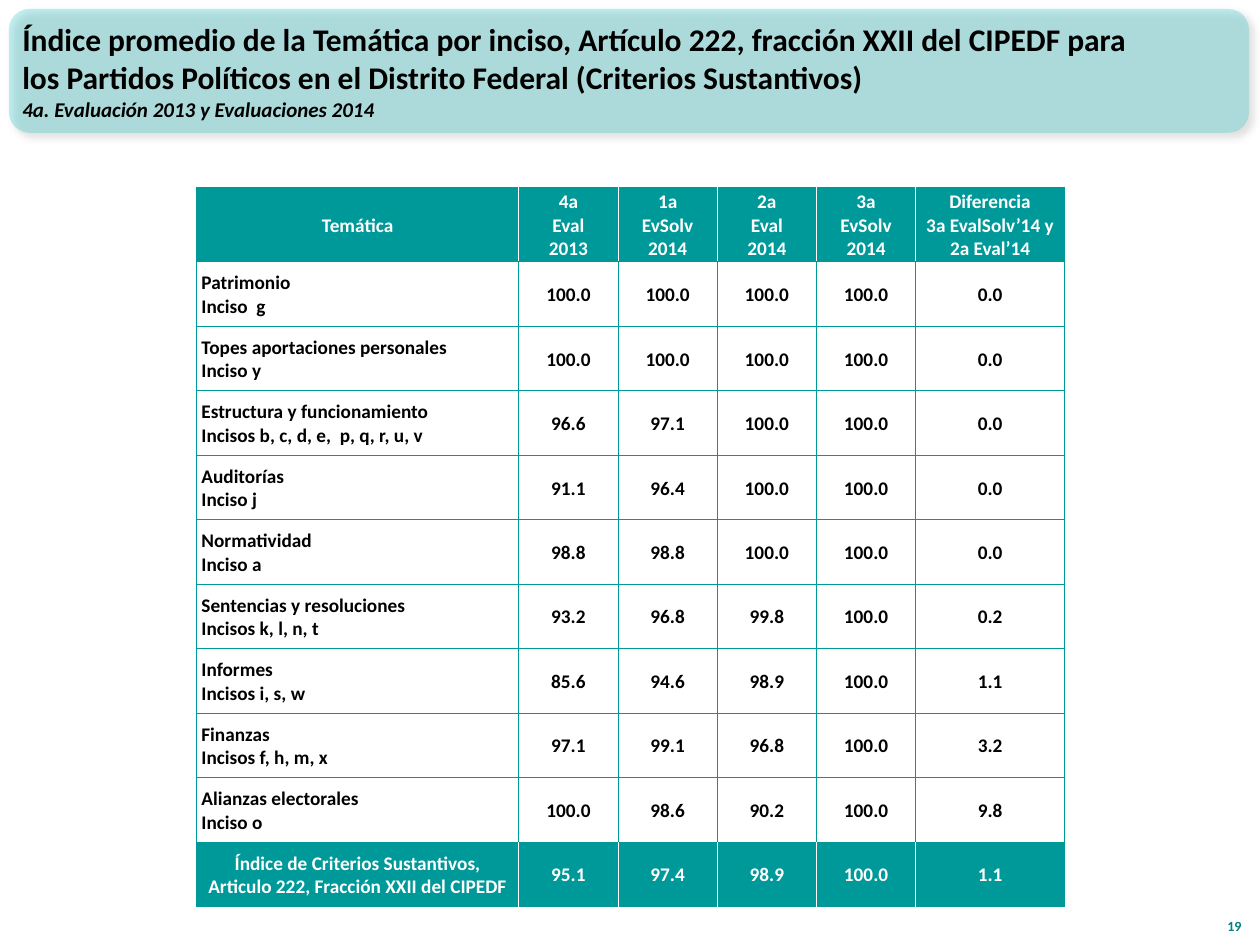
"""Build the slide with the thematic index table for political parties."""
from typing import NamedTuple

from lxml.etree import SubElement
from pptx import Presentation
from pptx.dml.color import RGBColor
from pptx.enum.shapes import MSO_SHAPE
from pptx.enum.text import MSO_ANCHOR, PP_ALIGN
from pptx.oxml.ns import qn
from pptx.util import Cm, Pt

TEAL, WHITE, BLACK = "009999", "FFFFFF", "000000"


class Box(NamedTuple):
    left: float
    top: float
    width: float
    height: float

    def cm(self) -> list:
        return [Cm(side) for side in self]


class Row(NamedTuple):
    label: str
    values: tuple
    solid: bool = False


ROWS = [
    Row("Temática", ("4a\nEval\n2013", "1a\nEvSolv\n2014", "2a\nEval\n2014",
                     "3a\nEvSolv\n2014",
                     "Diferencia\n3a EvalSolv’14 y\n2a Eval’14"), True),
    Row("Patrimonio\nInciso  g", ("100.0", "100.0", "100.0", "100.0", "0.0")),
    Row("Topes aportaciones personales\nInciso y",
        ("100.0", "100.0", "100.0", "100.0", "0.0")),
    Row("Estructura y funcionamiento\nIncisos b, c, d, e,  p, q, r, u, v",
        ("96.6", "97.1", "100.0", "100.0", "0.0")),
    Row("Auditorías\nInciso j", ("91.1", "96.4", "100.0", "100.0", "0.0")),
    Row("Normatividad\nInciso a", ("98.8", "98.8", "100.0", "100.0", "0.0")),
    Row("Sentencias y resoluciones\nIncisos k, l, n, t",
        ("93.2", "96.8", "99.8", "100.0", "0.2")),
    Row("Informes\nIncisos i, s, w", ("85.6", "94.6", "98.9", "100.0", "1.1")),
    Row("Finanzas\nIncisos f, h, m, x",
        ("97.1", "99.1", "96.8", "100.0", "3.2")),
    Row("Alianzas electorales\nInciso o",
        ("100.0", "98.6", "90.2", "100.0", "9.8")),
    Row("Índice de Criterios Sustantivos,\n"
        "Articulo 222, Fracción XXII del CIPEDF",
        ("95.1", "97.4", "98.9", "100.0", "1.1"), True),
]
WIDTHS = (6.5, 2, 2, 2, 2, 3)
HEIGHTS = (1.5,) + (1.3,) * (len(ROWS) - 1)


def paint(target, tint: str) -> None:
    target.rgb = RGBColor.from_string(tint)


def style(para, size: float, tint: str, align=PP_ALIGN.LEFT) -> None:
    para.alignment = align
    for run in para.runs:
        run.font.name = "Calibri"
        run.font.size = Pt(size)
        run.font.bold = True
        paint(run.font.color, tint)


def add_banner(slide, box: Box) -> None:
    shape = slide.shapes.add_shape(MSO_SHAPE.ROUNDED_RECTANGLE, *box.cm())
    shape.shadow.inherit = False
    shape.line.fill.background()
    shape.fill.solid()
    paint(shape.fill.fore_color, "33CCCC")
    props = shape.element.spPr
    tint = props.find(qn("a:solidFill")).find(qn("a:srgbClr"))
    SubElement(tint, qn("a:alpha"), val="30000")
    shade = SubElement(props.find(qn("a:effectLst")), qn("a:outerShdw"),
                       blurRad=str(Pt(4)), dist=str(Pt(3)), dir="2700000",
                       algn="tl", rotWithShape="0")
    tint = SubElement(shade, qn("a:srgbClr"), val=BLACK)
    SubElement(tint, qn("a:alpha"), val="40000")


def add_text(slide, box: Box, text: str, anchor):
    frame = slide.shapes.add_textbox(*box.cm()).text_frame
    frame.word_wrap = True
    frame.vertical_anchor = anchor
    frame.text = text
    return frame.paragraphs


def add_edge(cell, side: str, tint: str) -> None:
    props = cell._tc.get_or_add_tcPr()
    line = SubElement(props, qn(f"a:ln{side}"), w=str(Pt(0.75)))
    fill = SubElement(line, qn("a:solidFill"))
    SubElement(fill, qn("a:srgbClr"), val=tint)


def fill_cell(cell, text: str, col: int, solid: bool) -> None:
    label = col == 0 and not solid
    cell.margin_left = Cm(0.1 if label else 0.03)
    cell.margin_top = cell.margin_right = Cm(0.03)
    cell.margin_bottom = 0
    cell.vertical_anchor = MSO_ANCHOR.MIDDLE
    inner = WHITE if solid else TEAL
    add_edge(cell, "L", inner if col > 0 else TEAL)
    add_edge(cell, "R", inner if col < len(WIDTHS) - 1 else TEAL)
    add_edge(cell, "T", TEAL)
    add_edge(cell, "B", TEAL)
    if solid:
        cell.fill.solid()
        paint(cell.fill.fore_color, TEAL)
    else:
        cell.fill.background()
    cell.text_frame.text = text
    for para in cell.text_frame.paragraphs:
        style(para, 11, WHITE if solid else BLACK,
              PP_ALIGN.LEFT if label else PP_ALIGN.CENTER)


def add_grid(slide, left: float, top: float) -> None:
    box = Box(left, top, sum(WIDTHS), sum(HEIGHTS))
    table = slide.shapes.add_table(len(ROWS), len(WIDTHS), *box.cm()).table
    table.first_row = table.horz_banding = False
    for column, width in zip(table.columns, WIDTHS):
        column.width = Cm(width)
    for line, height in zip(table.rows, HEIGHTS):
        line.height = Cm(height)
    for i, row in enumerate(ROWS):
        for j, text in enumerate((row.label, *row.values)):
            fill_cell(table.cell(i, j), text, j, row.solid)


def main() -> None:
    deck = Presentation()
    deck.slide_width, deck.slide_height = Cm(25.4), Cm(19.05)
    slide = deck.slides.add_slide(deck.slide_layouts[6])
    add_banner(slide, Box(0.18, 0.18, 25, 2.5))
    page, = add_text(slide, Box(24.26, 17.93, 1.02, 1.02), "19",
                     MSO_ANCHOR.BOTTOM)
    style(page, 8, "008080", PP_ALIGN.RIGHT)
    title, note = add_text(
        slide, Box(0.2, 0.23, 23.3, 2.4),
        "Índice promedio de la Temática por inciso, Artículo 222, "
        "fracción XXII del CIPEDF para los Partidos Políticos en el "
        "Distrito Federal (Criterios Sustantivos)\n"
        "4a. Evaluación 2013 y Evaluaciones 2014", MSO_ANCHOR.MIDDLE)
    style(title, 18, BLACK)
    style(note, 12, BLACK)
    note.runs[0].font.italic = True
    add_grid(slide, 3.96, 3.78)
    deck.save("out.pptx")


if __name__ == "__main__":
    main()
